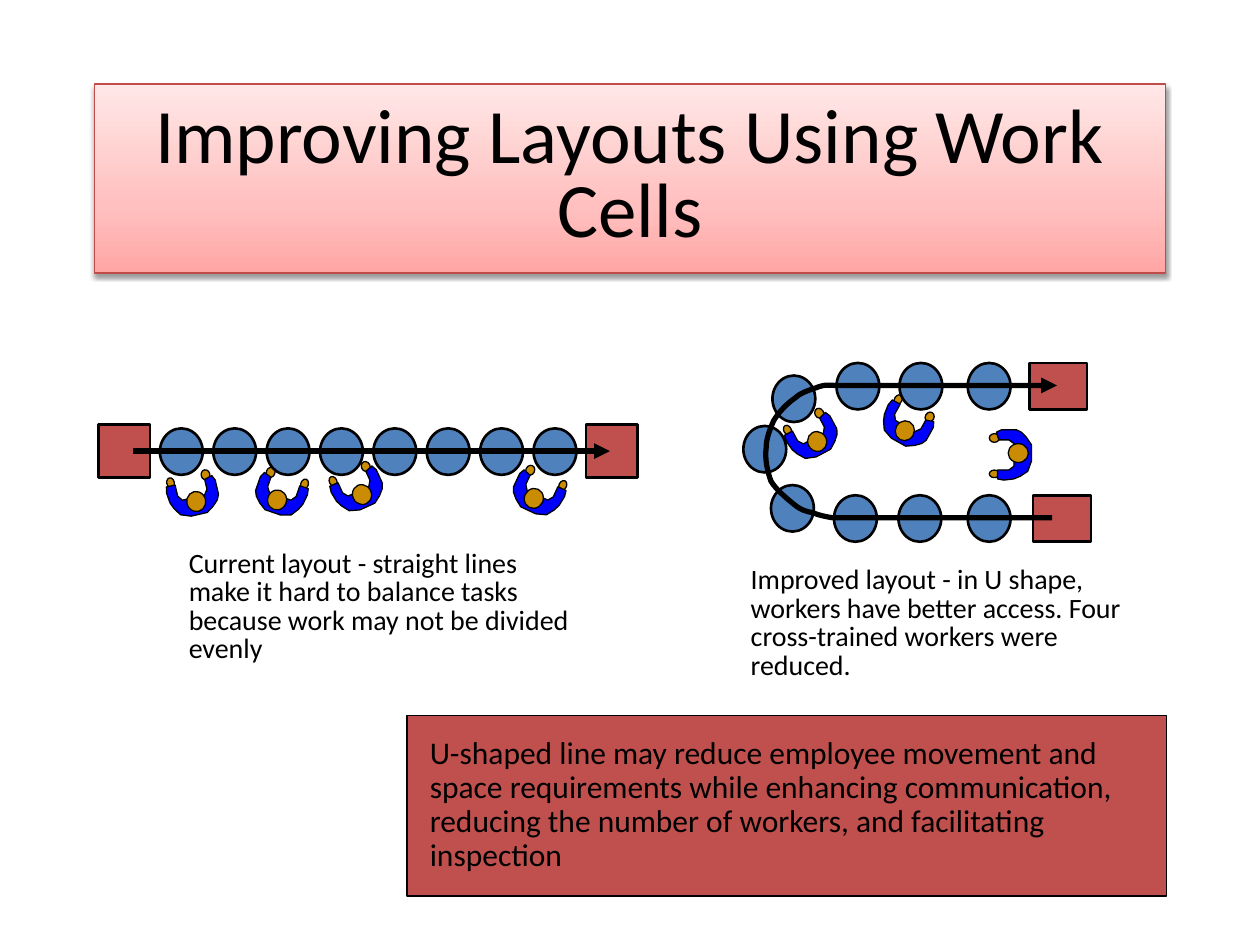
from copy import deepcopy

from lxml.etree import SubElement
from pptx import Presentation
from pptx.dml.color import RGBColor
from pptx.enum.shapes import MSO_CONNECTOR, MSO_SHAPE
from pptx.enum.text import MSO_ANCHOR, MSO_AUTO_SIZE, PP_ALIGN
from pptx.oxml.ns import qn
from pptx.util import Pt

BLACK = RGBColor(0x00, 0x00, 0x00)
RED = RGBColor(0xC0, 0x50, 0x4D)
TITLE_LINE = RGBColor(0xBF, 0x4C, 0x48)
STATION_BLUE = RGBColor(0x4F, 0x81, 0xBD)
BODY_BLUE = RGBColor(0x00, 0x00, 0xFF)
SKIN = RGBColor(0xCA, 0x8C, 0x02)
TITLE_STOPS = [(0, RGBColor(0xFF, 0xA6, 0xA5)), (0.35, RGBColor(0xFF, 0xC0, 0xBF)),
               (1, RGBColor(0xFF, 0xE7, 0xE7))]

TITLE = "Improving Layouts Using Work Cells"
CAPTIONS = [
    ("Current layout - straight lines make it hard to balance tasks "
     "because work may not be divided evenly", (100.8, 311, 234.7, 72.7)),
    ("Improved layout - in U shape, workers have better access. "
     "Four cross-trained workers were reduced.", (421.9, 320.4, 226.8, 72.7)),
]
SUMMARY = ("U-shaped line may reduce employee movement and space requirements while "
           "enhancing communication, reducing the number of workers, and "
           "facilitating inspection")

# Workers: centre x, centre y, rotation, mirrored
U_WORKERS = [(579.4, 260, 0, False), (464.8, 250.6, 62, False), (517.3, 243.4, 119, False)]
LINE_WORKERS = [(204.8, 280.8, 65.5, False), (307.1, 283, 295, True),
                (110.5, 284.4, 77, False), (160.2, 283.7, 289, True)]
# One worker facing left, relative to its centre
BODY = [(-10, -13), (-7, -14.4), (-2, -14.4), (1.4, -14.4), (4.3, -13), (7.2, -10),
        (10, -5.8), (10, 3.6), (7.9, 9.4), (3.6, 12.2), (0, 13.7), (-5.8, 14.4),
        (-9.4, 13.7), (-9.4, 8.6), (-2.9, 8.6), (0, 6.5), (0, -6.5), (-2.9, -8.6),
        (-8.6, -8.6)]
HANDS = [(-11.2, 10.8, 5.8, 4.3), (-11.2, -9.7, 5.8, 5)]
HEAD = (2.5, -1.1, 11.5, 10.8)

STATION = (24.5, 26.6)
LINE_STATIONS = [(91.4 + 30.5 * i, 244.8) for i in range(8)]
U_STATIONS = [(478, 207.4), (514, 207.4), (553, 207.4), (441.4, 214.6), (424.8, 243.4),
              (440.6, 277.2), (476.6, 283), (513.4, 283), (553, 283)]
LINE_ENDS = [(56.2, 242.6, 29.5, 30.2), (334.8, 242.6, 29.5, 30.2)]
U_ENDS = [(588.2, 207.4, 33.1, 26.6), (590.4, 283, 33.1, 26.6)]
# Start point, then three Bezier points for each curve
U_FLOW = [
    (604, 220.3),
    (560, 220.3), (500, 220.3), (477.4, 220.3),
    (474.5, 220.3), (471.6, 219.6), (468, 221),
    (464.4, 222.5), (457.9, 223.9), (454.3, 227.5),
    (450, 230.4), (445, 235.4), (442.1, 240.5),
    (439.9, 245.5), (437.8, 250.6), (437.8, 256.3),
    (437, 262.1), (438.5, 269.3), (440.6, 275),
    (443.5, 280), (450.7, 285.8), (454.3, 288.7),
    (457.9, 291.6), (460.8, 292.3), (464.4, 293),
    (468, 294.5), (471.6, 295.2), (475.9, 295.9),
    (520, 295.9), (560, 295.9), (601.2, 295.9),
]


def paint(sp, fill, width, line=BLACK):
    sp.shadow.inherit = False
    if fill is None:
        sp.fill.background()
    else:
        sp.fill.solid()
        sp.fill.fore_color.rgb = fill
    sp.line.color.rgb = line
    sp.line.width = Pt(width)


def add_preset(s, kind, box, fill, width, rotation=0):
    sp = s.shapes.add_shape(kind, *map(Pt, box))
    paint(sp, fill, width)
    sp.rotation = rotation
    return sp


def add_outline(s, points, fill, width, close):
    start, *rest = [(Pt(x), Pt(y)) for x, y in points]
    builder = s.shapes.build_freeform(*start)
    builder.add_line_segments(rest, close=close)
    sp = builder.convert_to_shape()
    paint(sp, fill, width)
    return sp


def add_arrowhead(sp, end):
    sp.line._get_or_add_ln().append(
        sp.element.makeelement(qn(f"a:{end}"), {"type": "triangle"}))


def set_text(sp, text, size, spacing, align=PP_ALIGN.LEFT, **frame):
    tf = sp.text_frame
    for name, value in {"word_wrap": True, **frame}.items():
        setattr(tf, name, value)
    p = tf.paragraphs[0]
    p.alignment, p.line_spacing = align, spacing
    r = p.add_run()
    r.text = text
    for name, value in {"name": "Calibri", "size": Pt(size)}.items():
        setattr(r.font, name, value)
    r.font.color.rgb = BLACK


def add_title(s):
    sp = s.shapes.title
    sp.left, sp.top, sp.width, sp.height = map(Pt, (54, 48, 612, 108))
    set_text(sp, TITLE, 44, 0.8, PP_ALIGN.CENTER, auto_size=MSO_AUTO_SIZE.NONE,
             vertical_anchor=MSO_ANCHOR.MIDDLE)
    sp.fill.gradient()
    sp.fill.gradient_angle = 90
    stops = sp.element.spPr.find(".//" + qn("a:gsLst"))
    stops.append(deepcopy(stops[0]))
    for stop, (position, color) in zip(sp.fill.gradient_stops, TITLE_STOPS):
        stop.position = position
        stop.color.rgb = color
    sp.line.color.rgb = TITLE_LINE
    sp.line.width = Pt(0.75)
    effects = SubElement(sp.element.spPr, qn("a:effectLst"))
    shadow = SubElement(effects, qn("a:outerShdw"), blurRad=str(Pt(3.1)),
                        dist=str(Pt(1.6)), dir="5400000", rotWithShape="0")
    color = SubElement(shadow, qn("a:srgbClr"), val="000000")
    SubElement(color, qn("a:alpha"), val="38000")


def add_worker(s, cx, cy, rotation, mirrored):
    """Draw hands, body and head, all turned about the worker's centre."""
    side = -1 if mirrored else 1
    body_points = [(cx + side * x, cy + y) for x, y in BODY]

    def add_round(x, y, w, h):
        turn = Pt(1)  # placed by the rotation of a point about the centre
        px, py = rotate(side * x, y, rotation)
        add_preset(s, MSO_SHAPE.OVAL, (cx + px - w / 2, cy + py - h / 2, w, h),
                   SKIN, 0.75, rotation)

    for hand in HANDS:
        add_round(*hand)
    add_outline(s, body_points, BODY_BLUE, 0.75, True).rotation = rotation
    add_round(*HEAD)


def rotate(x, y, degrees):
    turned = complex(x, y) * 1j ** (degrees / 90)
    return turned.real, turned.imag


def add_u_flow(s):
    sp = add_outline(s, U_FLOW, None, 3, False)
    path = sp.element.spPr.find(".//" + qn("a:path"))
    lines = path.findall(qn("a:lnTo"))
    for i in range(0, len(lines), 3):
        curve = SubElement(path, qn("a:cubicBezTo"))
        for line in lines[i:i + 3]:
            curve.append(line[0])
            path.remove(line)
    add_arrowhead(sp, "headEnd")


def add_straight_flow(s):
    sp = s.shapes.add_connector(MSO_CONNECTOR.STRAIGHT, Pt(76.3), Pt(257.8),
                                Pt(348.5), Pt(257.8))
    sp.line.color.rgb = BLACK
    sp.line.width = Pt(3)
    add_arrowhead(sp, "tailEnd")
    SubElement(sp.element.spPr, qn("a:effectLst"))


def main():
    prs = Presentation()
    prs.slide_width, prs.slide_height = Pt(720), Pt(540)
    s = prs.slides.add_slide(prs.slide_layouts[5])
    add_title(s)
    for text, box in CAPTIONS:
        set_text(s.shapes.add_textbox(*map(Pt, box)), text, 16, 0.85,
                 auto_size=MSO_AUTO_SIZE.SHAPE_TO_FIT_TEXT)
    for workers, ends, stations, add_flow in (
            (U_WORKERS, U_ENDS, U_STATIONS, add_u_flow),
            (LINE_WORKERS, LINE_ENDS, LINE_STATIONS, add_straight_flow)):
        for worker in workers:
            add_worker(s, *worker)
        for box in ends:
            add_preset(s, MSO_SHAPE.RECTANGLE, box, RED, 1.5)
        for corner in stations:
            add_preset(s, MSO_SHAPE.OVAL, corner + STATION, STATION_BLUE, 1.5)
        add_flow(s)
    summary = add_preset(s, MSO_SHAPE.RECTANGLE, (232.6, 409, 434.2, 103), RED, 0.75)
    set_text(summary, SUMMARY, 18, 0.9, vertical_anchor=MSO_ANCHOR.TOP,
             auto_size=MSO_AUTO_SIZE.SHAPE_TO_FIT_TEXT, margin_left=Pt(13),
             margin_right=Pt(13), margin_top=Pt(12.2), margin_bottom=Pt(12.2))
    prs.save("out.pptx")


if __name__ == "__main__":
    main()
